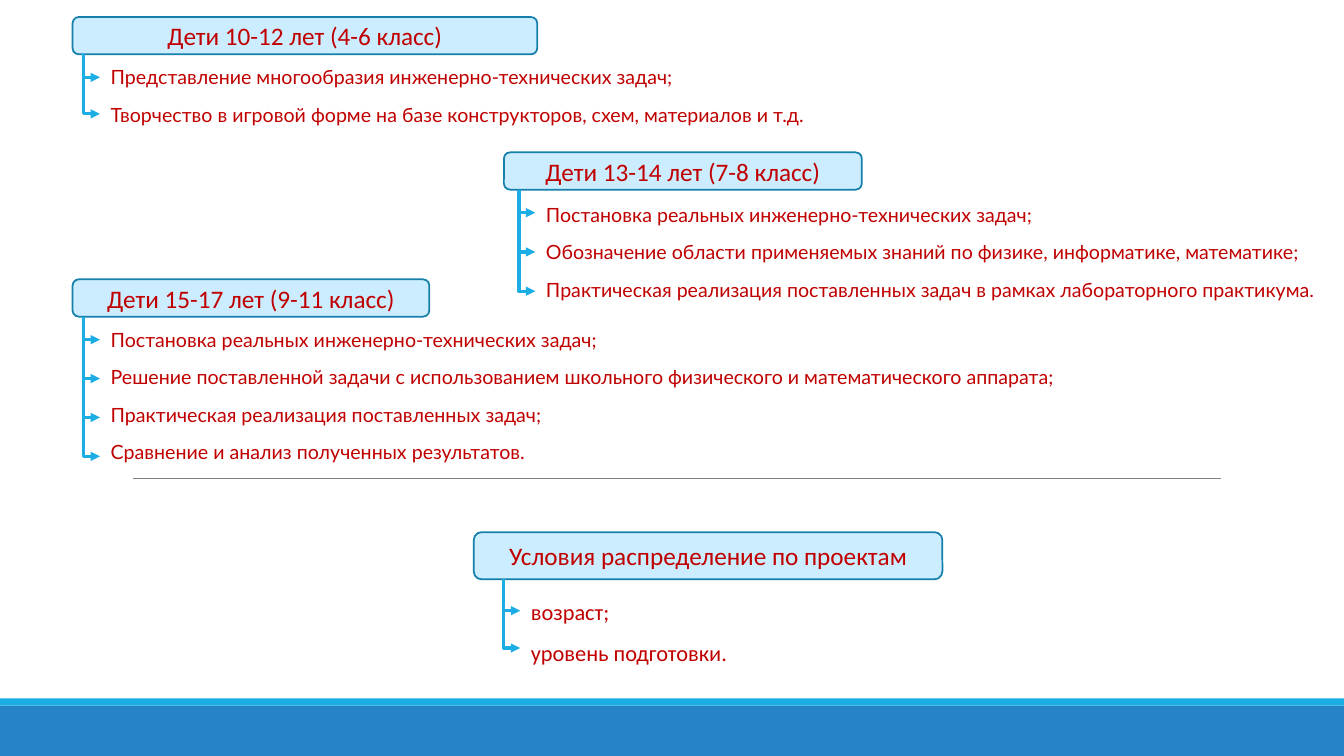
"""Build a slide of project stages by age group and the conditions for assigning projects."""
from lxml import etree
from pptx import Presentation
from pptx.dml.color import RGBColor
from pptx.enum import shapes, text
from pptx.oxml import ns
from pptx.util import Cm, Pt

SLIDE_WIDTH, SLIDE_HEIGHT = 33.87, 19.05
RED, PALE, OUTLINE, CYAN, BLUE, GREY = "C00000", "CCECFF", "1580A9", "1CADE4", "2683C6", "808080"
HEADER_FONT = {"name": "Calibri", "size": Pt(18)}
STAGE_FONT = {"name": "Lato", "size": Pt(14)}
CONDITION_FONT = {"name": "Calibri", "size": Pt(16)}
ARROW_LENGTH, ARROW_OVERLAP, ITEMS_INDENT = 0.41, 0.08, 0.43

BANDS = [(17.78, 1.27, BLUE), (17.6, 0.18, CYAN)]
DIVIDER = (3.35, 12.06, 30.78)

GROUPS = [
    {"header": "Дети 10-12 лет (4-6 класс)", "box": (1.83, 0.43, 11.71, 0.94),
     "trunk": 2.11, "first": 0.58, "pitch": 0.92, "gap": 0.15, "size": (19.94, 1.65),
     "font": STAGE_FONT,
     "items": ["Представление многообразия инженерно-технических задач;",
               "Творчество в игровой форме на базе конструкторов, схем, материалов и т.д."]},
    {"header": "Дети 13-14 лет (7-8 класс)", "box": (12.7, 3.84, 9.02, 0.94),
     "trunk": 13.08, "first": 0.58, "pitch": 0.99, "gap": 0.2, "size": (20.3, 2.92),
     "font": STAGE_FONT,
     "items": ["Постановка реальных инженерно-технических задач;",
               "Обозначение области применяемых знаний по физике, информатике, математике;",
               "Практическая реализация поставленных задач в рамках лабораторного практикума."]},
    {"header": "Дети 15-17 лет (9-11 класс)", "box": (1.83, 7.04, 8.99, 0.94),
     "trunk": 2.11, "first": 0.58, "pitch": 0.98, "gap": 0.15, "size": (25.81, 3.91),
     "font": STAGE_FONT,
     "items": ["Постановка реальных инженерно-технических задач;",
               "Решение поставленной задачи с использованием школьного физического и "
               "математического аппарата;",
               "Практическая реализация поставленных задач;",
               "Сравнение и анализ полученных результатов."]},
    {"header": "Условия распределение по проектам", "box": (11.94, 13.41, 11.81, 1.19),
     "trunk": 12.7, "first": 0.79, "pitch": 0.94, "gap": 0.36, "size": (6.45, 1.83),
     "font": CONDITION_FONT,
     "items": ["возраст;", "уровень подготовки."]},
]


def color(code):
    return RGBColor.from_string(code)


def write(paragraph, words, font_format):
    run = paragraph.add_run()
    run.text = words
    for name, value in font_format.items():
        setattr(run.font, name, value)
    run.font.color.rgb = color(RED)


def add_block(slide, kind, box, fill):
    block = slide.shapes.add_shape(kind, *map(Cm, box))
    block.shadow.inherit = False
    block.fill.solid()
    block.fill.fore_color.rgb = color(fill)
    block.line.fill.background()
    return block


def add_line(slide, kind, ends, code, width):
    line = slide.shapes.add_connector(kind, *map(Cm, ends))
    line.line.color.rgb = color(code)
    line.line.width = Pt(width)
    etree.SubElement(line._element.spPr, ns.qn("a:effectLst"))
    return line


def add_branch(slide, trunk, start, tip):
    """Draw an arrow that runs down the trunk and then right to the tip."""
    drop = tip - start
    center_x, center_y = trunk + ARROW_LENGTH / 2, (start + tip) / 2
    ends = (center_x + drop / 2, center_y - ARROW_LENGTH / 2,
            center_x - drop / 2, center_y + ARROW_LENGTH / 2)
    branch = add_line(slide, shapes.MSO_CONNECTOR.ELBOW, ends, CYAN, 2.25)
    properties = branch._element.spPr
    properties.find(ns.qn("a:xfrm")).set("rot", "16200000")
    adjustments = properties.find(ns.qn("a:prstGeom")).find(ns.qn("a:avLst"))
    etree.SubElement(adjustments, ns.qn("a:gd"), name="adj1", fmla="val 100000")
    etree.SubElement(properties.find(ns.qn("a:ln")), ns.qn("a:tailEnd"), type="triangle")


def add_group(slide, group):
    header = add_block(slide, shapes.MSO_SHAPE.ROUNDED_RECTANGLE, group["box"], PALE)
    header.line.color.rgb = color(OUTLINE)
    header.line.width = Pt(1.25)
    header.text_frame.word_wrap = True
    header.text_frame.vertical_anchor = text.MSO_ANCHOR.MIDDLE
    title = header.text_frame.paragraphs[0]
    title.alignment = text.PP_ALIGN.CENTER
    write(title, group["header"], HEADER_FONT)

    bottom = group["box"][1] + group["box"][3]
    items_box = (group["trunk"] + ITEMS_INDENT, bottom + group["gap"], *group["size"])
    items_frame = slide.shapes.add_textbox(*map(Cm, items_box)).text_frame
    items_frame.word_wrap = True
    start = bottom
    for index, item in enumerate(group["items"]):
        paragraph = items_frame.add_paragraph() if index else items_frame.paragraphs[0]
        paragraph.space_before = Pt(10)
        write(paragraph, item, group["font"])
        tip = bottom + group["first"] + index * group["pitch"]
        add_branch(slide, group["trunk"], start, tip)
        start = tip - ARROW_OVERLAP


def main():
    deck = Presentation()
    deck.slide_width, deck.slide_height = Cm(SLIDE_WIDTH), Cm(SLIDE_HEIGHT)
    slide = deck.slides.add_slide(deck.slide_layouts[6])
    for top, height, fill in BANDS:
        add_block(slide, shapes.MSO_SHAPE.RECTANGLE, (0, top, SLIDE_WIDTH, height), fill)
    left, level, right = DIVIDER
    add_line(slide, shapes.MSO_CONNECTOR.STRAIGHT, (left, level, right, level), GREY, 0.5)
    for group in GROUPS:
        add_group(slide, group)
    deck.save("out.pptx")


if __name__ == "__main__":
    main()
